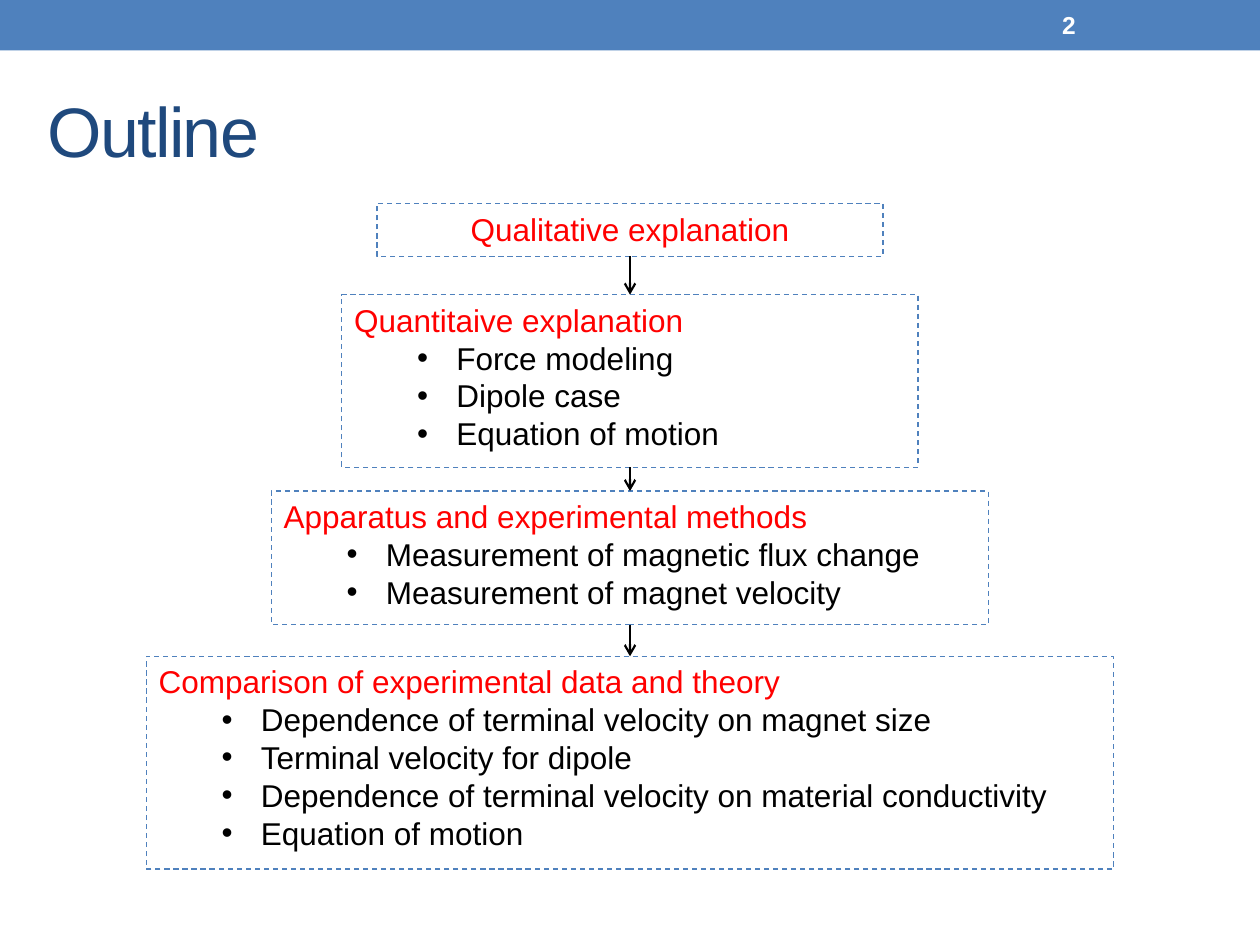
from dataclasses import dataclass
from itertools import pairwise

from lxml.etree import SubElement
from pptx import Presentation
from pptx.dml.color import RGBColor
from pptx.enum.dml import MSO_LINE
from pptx.enum.shapes import MSO_CONNECTOR, MSO_SHAPE
from pptx.enum.text import MSO_ANCHOR, PP_ALIGN
from pptx.oxml.ns import qn
from pptx.util import Cm, Pt

BLUE, NAVY, RED, BLACK, WHITE = "4F81BD", "1F497D", "FF0000", "000000", "FFFFFF"
SLIDE_WIDTH, SLIDE_HEIGHT = 25.4, 19.05
CENTER = SLIDE_WIDTH / 2


@dataclass
class Stage:
    """One step of the outline, centred on the slide; lengths in cm."""
    heading: str
    top: float
    width: float
    height: float
    points: tuple[str, ...] = ()

    @property
    def bottom(self) -> float:
        return self.top + self.height


STAGES = (
    Stage("Qualitative explanation", 4.1, 10.2, 1.07),
    Stage("Quantitaive explanation", 5.94, 11.62, 3.48,
          ("Force modeling", "Dipole case", "Equation of motion")),
    Stage("Apparatus and experimental methods", 9.9, 14.46, 2.69,
          ("Measurement of magnetic flux change",
           "Measurement of magnet velocity")),
    Stage("Comparison of experimental data and theory", 13.23, 19.5, 4.29,
          ("Dependence of terminal velocity on magnet size",
           "Terminal velocity for dipole",
           "Dependence of terminal velocity on material conductivity",
           "Equation of motion")),
)


def rgb(color: str) -> RGBColor:
    return RGBColor.from_string(color)


def write(paragraph, text: str, size: float, color: str, bold: bool = False):
    run = paragraph.add_run()
    run.text = text
    formats = {"name": "Arial", "size": Pt(size), "bold": bold}
    for attribute, value in formats.items():
        setattr(run.font, attribute, value)
    run.font.color.rgb = rgb(color)
    return run


def add_bullet(paragraph) -> None:
    paragraph.level = 1
    properties = paragraph._p.get_or_add_pPr()
    properties.set("marL", str(Cm(2.06)))
    properties.set("indent", str(-Cm(0.79)))
    SubElement(properties, qn("a:buFont"), typeface="Arial")
    SubElement(properties, qn("a:buChar"), char="•")


def add_stage(slide, stage: Stage) -> None:
    box = slide.shapes.add_shape(
        MSO_SHAPE.RECTANGLE, Cm(CENTER - stage.width / 2), Cm(stage.top),
        Cm(stage.width), Cm(stage.height))
    box.shadow.inherit = False
    box.fill.background()
    box.line.color.rgb = rgb(BLUE)
    box.line.width = Pt(0.75)
    box.line.dash_style = MSO_LINE.DASH

    frame = box.text_frame
    frame.word_wrap = True
    frame.vertical_anchor = MSO_ANCHOR.TOP
    heading = frame.paragraphs[0]
    heading.alignment = PP_ALIGN.LEFT if stage.points else PP_ALIGN.CENTER
    write(heading, stage.heading, 18, RED)
    for point in stage.points:
        paragraph = frame.add_paragraph()
        paragraph.alignment = PP_ALIGN.LEFT
        add_bullet(paragraph)
        write(paragraph, point, 18, BLACK)


def add_arrow(slide, upper: Stage, lower: Stage) -> None:
    arrow = slide.shapes.add_connector(
        MSO_CONNECTOR.STRAIGHT, Cm(CENTER), Cm(upper.bottom),
        Cm(CENTER), Cm(lower.top))
    arrow.line.color.rgb = rgb(BLACK)
    arrow.line.width = Pt(1.25)
    SubElement(arrow.line._get_or_add_ln(), qn("a:tailEnd"), type="arrow")
    SubElement(arrow._element.spPr, qn("a:effectLst"))


def add_header(slide) -> None:
    """Draw the top bar, the page number and the title."""
    bar = slide.shapes.add_shape(
        MSO_SHAPE.RECTANGLE, 0, 0, Cm(SLIDE_WIDTH), Cm(1.02))
    bar.shadow.inherit = False
    bar.fill.solid()
    bar.fill.fore_color.rgb = rgb(BLUE)
    bar.line.fill.background()

    page_number = slide.shapes.add_textbox(Cm(21.16), Cm(0.05), Cm(2.97), Cm(0.91))
    page_number.text_frame.word_wrap = True
    page_number.text_frame.vertical_anchor = MSO_ANCHOR.MIDDLE
    write(page_number.text_frame.paragraphs[0], "2", 14, WHITE, bold=True)

    title = slide.shapes.title
    place = {"left": 0.71, "top": 1.24, "width": 22.86, "height": 2.74}
    for attribute, length in place.items():
        setattr(title, attribute, Cm(length))
    title.text_frame.vertical_anchor = MSO_ANCHOR.MIDDLE
    heading = title.text_frame.paragraphs[0]
    heading.alignment = PP_ALIGN.LEFT
    run = write(heading, "Outline", 40, NAVY)
    run.font._element.set("spc", "-100")


def main() -> None:
    presentation = Presentation()
    presentation.slide_width = Cm(SLIDE_WIDTH)
    presentation.slide_height = Cm(SLIDE_HEIGHT)
    title_only = presentation.slide_layouts[5]
    slide = presentation.slides.add_slide(title_only)
    add_header(slide)
    for stage in STAGES:
        add_stage(slide, stage)
    for upper, lower in pairwise(STAGES):
        add_arrow(slide, upper, lower)
    presentation.save("out.pptx")


if __name__ == "__main__":
    main()
